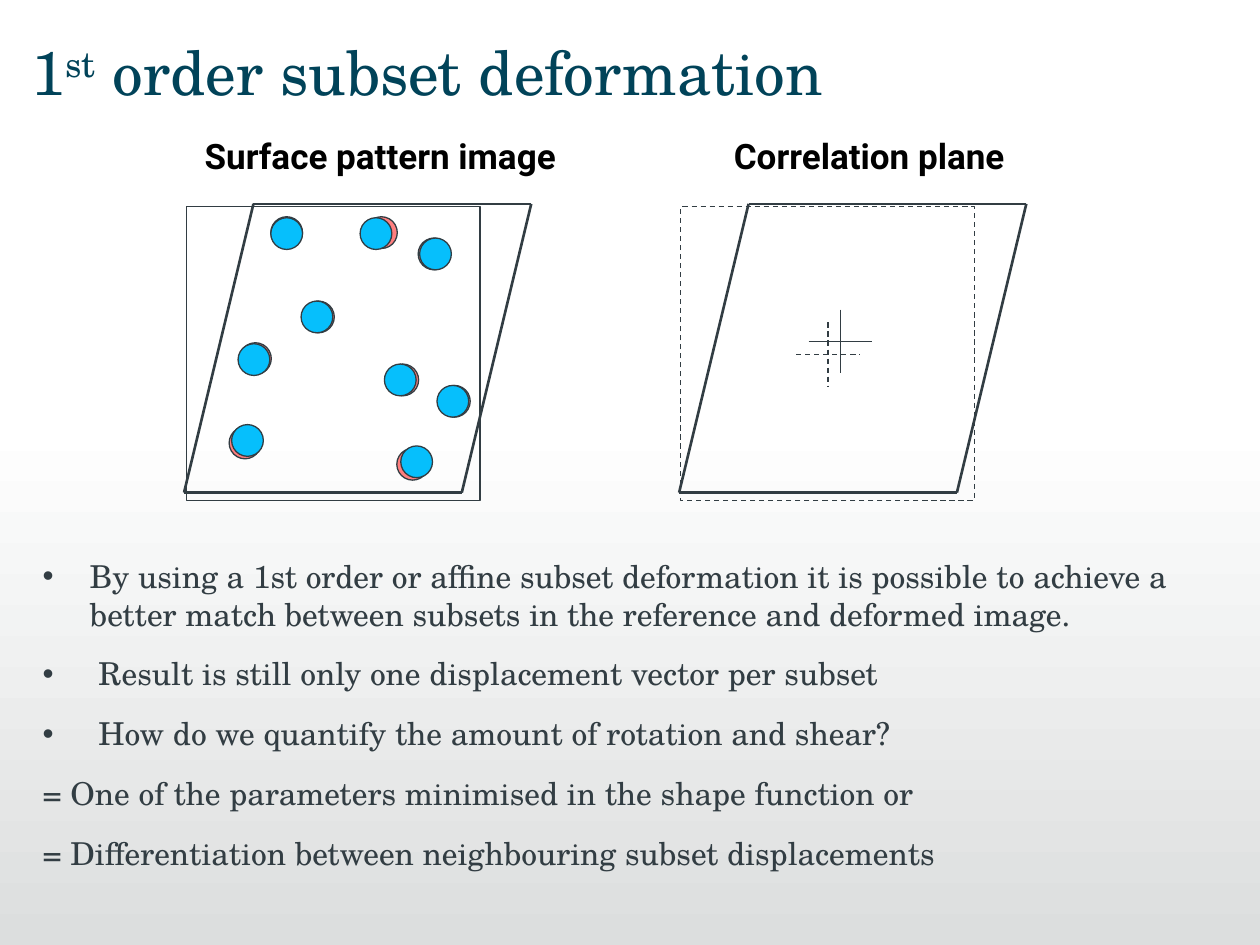
from dataclasses import dataclass

from lxml import etree
from pptx import Presentation
from pptx import util as u
from pptx.dml.color import RGBColor
from pptx.enum import dml, shapes, text
from pptx.oxml import ns


@dataclass(frozen=True)
class Theme:
    ink: RGBColor = RGBColor(0x32, 0x3D, 0x43)
    title: RGBColor = RGBColor(0x01, 0x43, 0x59)
    heading: RGBColor = RGBColor(0, 0, 0)
    before: RGBColor = RGBColor(0xFF, 0, 0)
    after: RGBColor = RGBColor(0x06, 0xBF, 0xFC)
    fade_top: RGBColor = RGBColor(0xFF, 0xFF, 0xFF)
    fade_bottom: RGBColor = RGBColor(0xDC, 0xDE, 0xDE)
    serif: str = "TeX Gyre Schola"
    sans: str = "Roboto"
    title_size: float = 35
    heading_size: float = 20
    body_size: float = 18
    thin: float = 0.75
    thick: float = 1.5


T = Theme()
SHAPE = shapes.MSO_SHAPE
DASH = dml.MSO_LINE.DASH

prs = Presentation()
prs.slide_width, prs.slide_height = u.Cm(25.4), u.Cm(19.05)
s = prs.slides.add_slide(prs.slide_layouts[6])


def add_outlined(kind, x, y, size, fill=None, dash=None):
    sp = s.shapes.add_shape(kind, u.Cm(x), u.Cm(y), u.Cm(size), u.Cm(size))
    sp.shadow.inherit = False
    if fill is None:
        sp.fill.background()
    else:
        sp.fill.solid()
        sp.fill.fore_color.rgb = fill
    sp.line.color.rgb = T.ink
    sp.line.width = u.Pt(T.thin)
    sp.line.dash_style = dash
    return sp


def add_line(x1, y1, x2, y2, width, dash=None):
    cn = s.shapes.add_connector(shapes.MSO_CONNECTOR.STRAIGHT,
                                u.Cm(x1), u.Cm(y1), u.Cm(x2), u.Cm(y2))
    cn.line.color.rgb = T.ink
    cn.line.width = u.Pt(width)
    cn.line.dash_style = dash
    etree.SubElement(cn._element.spPr, ns.qn("a:effectLst"))


# Background fade over the lower part
fade = s.shapes.add_shape(SHAPE.RECTANGLE, 0, u.Cm(8.46), u.Cm(25.4), u.Cm(10.59))
fade.shadow.inherit = False
fade.line.fill.background()
fade.fill.gradient()
fade.fill.gradient_angle = 270
for stop, position, color in zip(fade.fill.gradient_stops, (0, 1),
                                 (T.fade_top, T.fade_bottom)):
    stop.position = position
    stop.color.rgb = color

# Panel headings
for x, width, label in ((3.43, 8.48, "Surface pattern image"),
                        (14.35, 6.35, "Correlation plane")):
    tf = s.shapes.add_textbox(u.Cm(x), u.Cm(2.59), u.Cm(width), u.Cm(1.1)).text_frame
    tf.word_wrap = True
    tf.text = label
    p = tf.paragraphs[0]
    p.alignment = text.PP_ALIGN.CENTER
    r = p.runs[0]
    r.font.name, r.font.size, r.font.bold = T.sans, u.Pt(T.heading_size), True
    r.font.color.rgb = T.heading

# Undeformed subsets
for x, dash in ((3.76, None), (13.72, DASH)):
    add_outlined(SHAPE.RECTANGLE, x, 4.17, 5.92, dash=dash)

# Speckles: reference position and shift after deformation
speckles = [
    (5.46, 4.37, 0, 0.02), (6.1, 6.07, -0.03, 0), (7.37, 4.37, -0.11, 0.02),
    (8.43, 4.8, 0.03, 0), (7.8, 7.34, -0.05, 0), (8.84, 7.77, -0.03, 0),
    (4.83, 6.91, -0.03, 0.02), (4.62, 8.61, 0.05, -0.05), (8, 9.04, 0.08, -0.05),
]
for x, y, dx, dy in speckles:
    dot = add_outlined(SHAPE.OVAL, x, y, 0.64, T.before)
    rgb = dot._element.spPr.find(".//" + ns.qn("a:srgbClr"))
    etree.SubElement(rgb, ns.qn("a:alpha"), val="50000")
for x, y, dx, dy in speckles:
    add_outlined(SHAPE.OVAL, x + dx, y + dy, 0.64, T.after)

# Correlation peaks: before (dashed) and after (solid)
arm = 0.64
for x, y, dash in ((16.69, 7.14, DASH), (16.94, 6.88, None)):
    add_line(x - arm, y, x + arm, y, T.thin, dash)
    add_line(x, y - arm, x, y + arm, T.thin, dash)

# Sheared subsets
top, bottom, side, shear = 4.11, 9.93, 5.6, 1.4
for x in (3.71, 13.69):
    add_line(x + shear, top, x + shear + side, top, T.thick)
    add_line(x, bottom, x + side, bottom, T.thick)
    for left in (x, x + side):
        add_line(left, bottom, left + shear, top, T.thick)

# Title
tf = s.shapes.add_textbox(u.Cm(0.64), u.Cm(0.53), u.Cm(23.6), u.Cm(1.8)).text_frame
tf.word_wrap = True
tf.margin_left = 0
tf.vertical_anchor = text.MSO_ANCHOR.MIDDLE
p = tf.paragraphs[0]
for part in ("1", "st", " order subset deformation"):
    r = p.add_run()
    r.text = part
    r.font.name, r.font.size = T.serif, u.Pt(T.title_size)
    r.font.color.rgb = T.title
p.runs[1].font._element.set("baseline", "30000")

# Body
body = [
    ("•", "By using a 1st order or affine subset deformation it is possible to achieve "
          "a better match between subsets in the reference and deformed image."),
    ("•", " Result is still only one displacement vector per subset"),
    ("•", " How do we quantify the amount of rotation and shear?"),
    (None, "= One of the parameters minimised in the shape function or"),
    (None, "= Differentiation between neighbouring subset displacements"),
]
tf = s.shapes.add_textbox(u.Cm(0.86), u.Cm(11.1), u.Cm(23.6), u.Cm(6.93)).text_frame
tf.word_wrap = True
tf.margin_left = 0
for i, (bullet, line) in enumerate(body):
    p = tf.add_paragraph() if i else tf.paragraphs[0]
    p.text = line
    p.space_after = u.Pt(0.7 * T.body_size)
    if bullet:
        pPr = p._p.get_or_add_pPr()
        pPr.set("marL", str(u.Cm(0.95)))
        pPr.set("indent", str(-u.Cm(0.95)))
        etree.SubElement(pPr, ns.qn("a:buFont"), typeface="Arial")
        etree.SubElement(pPr, ns.qn("a:buChar"), char=bullet)
    r = p.runs[0]
    r.font.name, r.font.size = T.serif, u.Pt(T.body_size)
    r.font.color.rgb = T.ink

prs.save("out.pptx")
